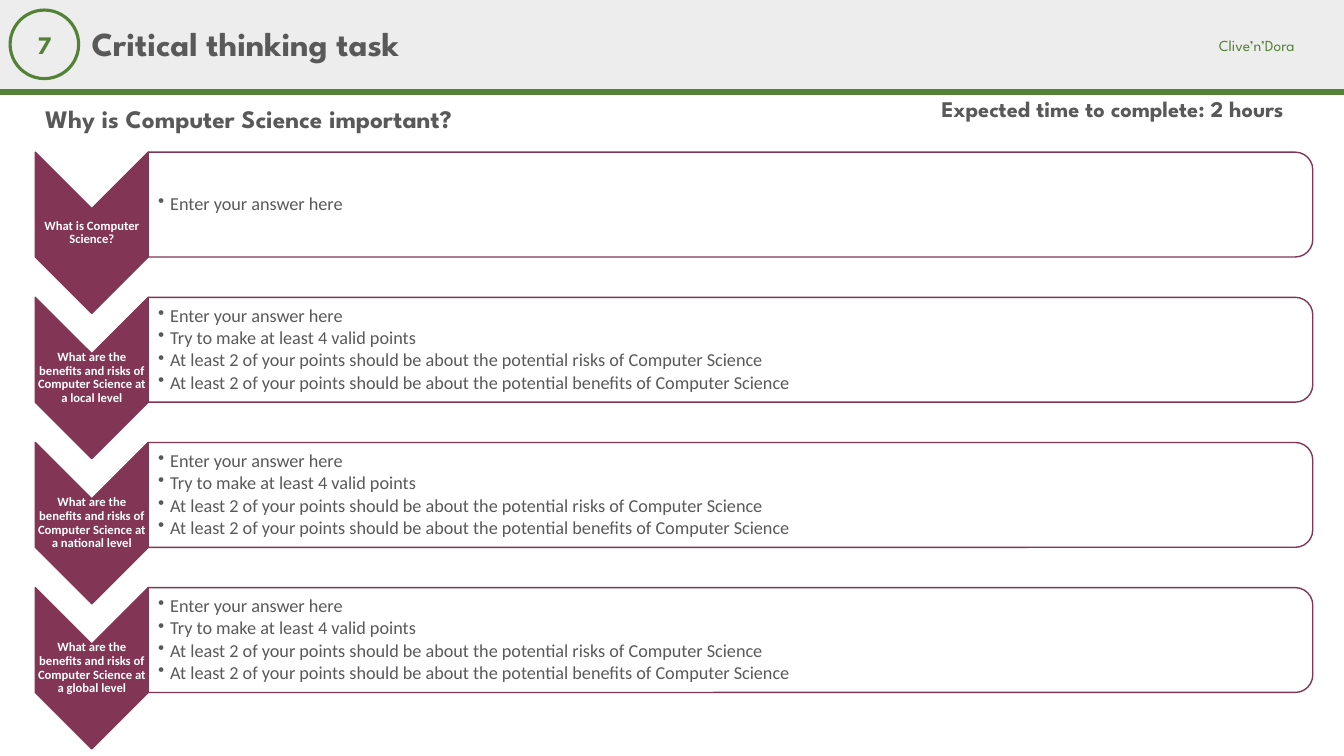
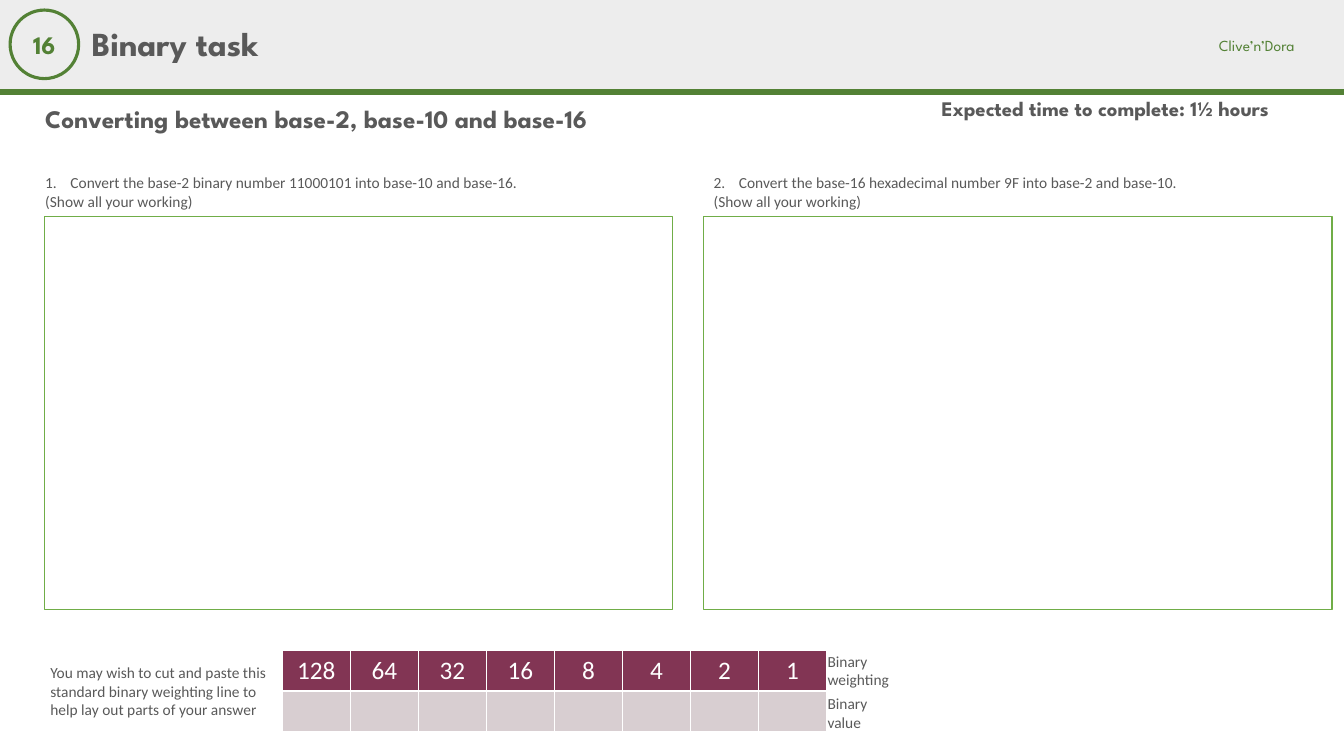
from lxml import etree
from pptx import Presentation
from pptx.dml.color import RGBColor
from pptx.enum.shapes import MSO_CONNECTOR, MSO_SHAPE
from pptx.enum.text import MSO_ANCHOR, PP_ALIGN
from pptx.oxml.ns import qn
from pptx.util import Inches, Pt

COLORS = {
    "band": "EDEDED",
    "green": "538135",
    "frame": "70AD47",
    "plum": "823554",
    "pale": "D8CED1",
    "grey": "595959",
    "white": "FFFFFF",
}
HEAD_FONT = "League Spartan"
BODY_FONT = "Calibri"


def rgb(name):
    return RGBColor.from_string(COLORS[name])


class Deck:
    def __init__(self):
        self.prs = Presentation()
        self.prs.slide_width = Inches(13.33)
        self.prs.slide_height = Inches(7.5)
        self.slide = None

    def start(self, number, title, subtitle, time, time_size):
        self.slide = self.prs.slides.add_slide(self.prs.slide_layouts[6])
        self.shape(MSO_SHAPE.RECTANGLE, 0, 0, 13.33, 0.91, fill="band")
        self.rule(0, 0.91, 13.33, 0.91)
        self.text(["Clive’n’Dora"], 11.99, 0.31, 1.22, 0.29, 11, "green", HEAD_FONT)
        head = dict(font=HEAD_FONT, bold=True, spacing=0.9)
        self.text([f"Expected time to complete: {time}"], 9.24, 0.93, 4.09, 0.4,
                  time_size, **head)
        sp = self.shape(MSO_SHAPE.OVAL, 0.1, 0.1, 0.68, 0.68, line="green", weight=2.25)
        self.fill_text(sp.text_frame, [number], 18, "green", HEAD_FONT, True,
                       PP_ALIGN.CENTER, MSO_ANCHOR.MIDDLE, (0, 0, 0, 0))
        self.text([subtitle], 0.35, 0.99, 8.43, 0.4, 18, anchor=MSO_ANCHOR.MIDDLE, **head)
        self.text([title], 0.81, 0.09, 10.31, 0.73, 24, anchor=MSO_ANCHOR.MIDDLE, **head)

    def shape(self, kind, x, y, w, h, fill=None, line=None, weight=1, alpha=None):
        sp = self.slide.shapes.add_shape(kind, Inches(x), Inches(y), Inches(w), Inches(h))
        sp.shadow.inherit = False
        if fill:
            sp.fill.solid()
            sp.fill.fore_color.rgb = rgb(fill)
            if alpha:
                color = sp._element.spPr.find(qn("a:solidFill")).find(qn("a:srgbClr"))
                etree.SubElement(color, qn("a:alpha"), val=str(alpha * 1000))
        else:
            sp.fill.background()
        if line:
            sp.line.color.rgb = rgb(line)
            sp.line.width = Pt(weight)
        else:
            sp.line.fill.background()
        return sp

    def turned(self, kind, x, y, w, h, **style):
        shift = (w - h) / 2
        sp = self.shape(kind, x + shift, y - shift, h, w, **style)
        sp.rotation = 90

    def rule(self, x1, y1, x2, y2):
        line = self.slide.shapes.add_connector(
            MSO_CONNECTOR.STRAIGHT, Inches(x1), Inches(y1), Inches(x2), Inches(y2))
        line.line.color.rgb = rgb("green")
        line.line.width = Pt(4.5)
        etree.SubElement(line._element.spPr, qn("a:effectLst"))

    def text(self, lines, x, y, w, h, size, *args, **style):
        box = self.slide.shapes.add_textbox(Inches(x), Inches(y), Inches(w), Inches(h))
        self.fill_text(box.text_frame, lines, size, *args, **style)
        return box.text_frame

    def fill_text(self, tf, lines, size, color="grey", font=BODY_FONT, bold=False,
                  align=PP_ALIGN.LEFT, anchor=MSO_ANCHOR.TOP, insets=None,
                  spacing=None, after=None):
        tf.word_wrap = True
        tf.vertical_anchor = anchor
        if insets:
            tf.margin_left, tf.margin_top, tf.margin_right, tf.margin_bottom = map(
                Inches, insets)
        tf.text = "\n".join(lines)
        for p in tf.paragraphs:
            p.alignment = align
            if spacing:
                p.line_spacing = spacing
            if after:
                p.space_after = Pt(after)
            for r in p.runs:
                r.font.name = font
                r.font.size = Pt(size)
                r.font.bold = bold
                r.font.color.rgb = rgb(color)

    def bullet(self, p, indent, tag, **attrs):
        pPr = p._p.get_or_add_pPr()
        pPr.set("marL", str(Inches(indent)))
        pPr.set("indent", str(-Inches(indent)))
        etree.SubElement(pPr, qn(tag), **attrs)

    def question_row(self, y, question, points):
        self.turned(MSO_SHAPE.CHEVRON, 0.35, y, 1.12, 1.6, fill="plum", line="plum")
        self.text([question], 0.35, y + 0.56, 1.12, 0.48, 9, "white", bold=True,
                  align=PP_ALIGN.CENTER, anchor=MSO_ANCHOR.MIDDLE,
                  insets=(0.01, 0.01, 0.01, 0.01), spacing=0.9)
        self.turned(MSO_SHAPE.ROUND_2_SAME_RECTANGLE, 1.47, y, 11.55, 1.04,
                    fill="white", line="plum", alpha=90)
        tf = self.text(points, 1.47, y + 0.05, 11.5, 0.94, 13, anchor=MSO_ANCHOR.MIDDLE,
                       insets=(0.1, 0.01, 0.01, 0.01), spacing=0.9, after=1.9)
        for p in tf.paragraphs:
            self.bullet(p, 0.12, "a:buChar", char="•")

    def exercise(self, number, question, text_x, text_w, frame_x):
        tf = self.text([question, "(Show all your working)"], text_x, 1.67, text_w, 0.47, 11)
        self.bullet(tf.paragraphs[0], 0.25, "a:buAutoNum",
                    type="arabicPeriod", startAt=str(number))
        self.shape(MSO_SHAPE.RECTANGLE, frame_x, 2.15, 6.23, 3.9, line="frame")

    def cell_borders(self, cell):
        tcPr = cell._tc.get_or_add_tcPr()
        for i, side in enumerate(("a:lnL", "a:lnR", "a:lnT", "a:lnB")):
            ln = etree.Element(qn(side), w=str(Pt(1)))
            fill = etree.SubElement(ln, qn("a:solidFill"))
            etree.SubElement(fill, qn("a:srgbClr"), val=COLORS["white"])
            tcPr.insert(i, ln)

    def weighting_table(self, x, y, w, h, weights):
        table = self.slide.shapes.add_table(
            2, len(weights), Inches(x), Inches(y), Inches(w), Inches(h)).table
        for row, fill in enumerate(("plum", "pale")):
            for col, weight in enumerate(weights):
                cell = table.cell(row, col)
                cell.fill.solid()
                cell.fill.fore_color.rgb = rgb(fill)
                self.cell_borders(cell)
                if row == 0:
                    cell.text_frame.text = str(weight)
                    p = cell.text_frame.paragraphs[0]
                    p.alignment = PP_ALIGN.CENTER
                    r = p.runs[0]
                    r.font.name = BODY_FONT
                    r.font.size = Pt(18)
                    r.font.bold = False
                    r.font.color.rgb = rgb("white")


def critical_thinking(deck):
    deck.start("7", "Critical thinking task", "Why is Computer Science important?",
               "2 hours", 16)
    prompts = ["Enter your answer here", "Try to make at least 4 valid points"] + [
        f"At least 2 of your points should be about the potential {side} of Computer Science"
        for side in ("risks", "benefits")]
    rows = [("What is Computer Science?", prompts[:1])] + [
        (f"What are the benefits and risks of Computer Science at a {level} level", prompts)
        for level in ("local", "national", "global")]
    for i, (question, points) in enumerate(rows):
        deck.question_row(1.51 + 1.44 * i, question, points)


def binary(deck):
    deck.start("16", "Binary task", "Converting between base-2, base-10 and base-16",
               "1½ hours", 14.8)
    deck.exercise(1, "Convert the base-2 binary number 11000101 into base-10 and base-16.",
                  0.35, 7.13, 0.44)
    deck.exercise(2, "Convert the base-16 hexadecimal number 9F into base-2 and base-10.",
                  6.98, 6.2, 6.98)
    deck.weighting_table(2.8, 6.45, 5.4, 0.81, [2 ** n for n in range(7, -1, -1)])
    for i, label in enumerate(("Binary weighting", "Binary value")):
        deck.text([label], 8.11, 6.42 + 0.42 * i, 0.93, 0.47, 11)
    deck.text(["You may wish to cut and paste this standard binary weighting line "
               "to help lay out parts of your answer"], 0.4, 6.53, 2.38, 0.66, 11)


def main():
    deck = Deck()
    critical_thinking(deck)
    binary(deck)
    deck.prs.save("out.pptx")


if __name__ == "__main__":
    main()
